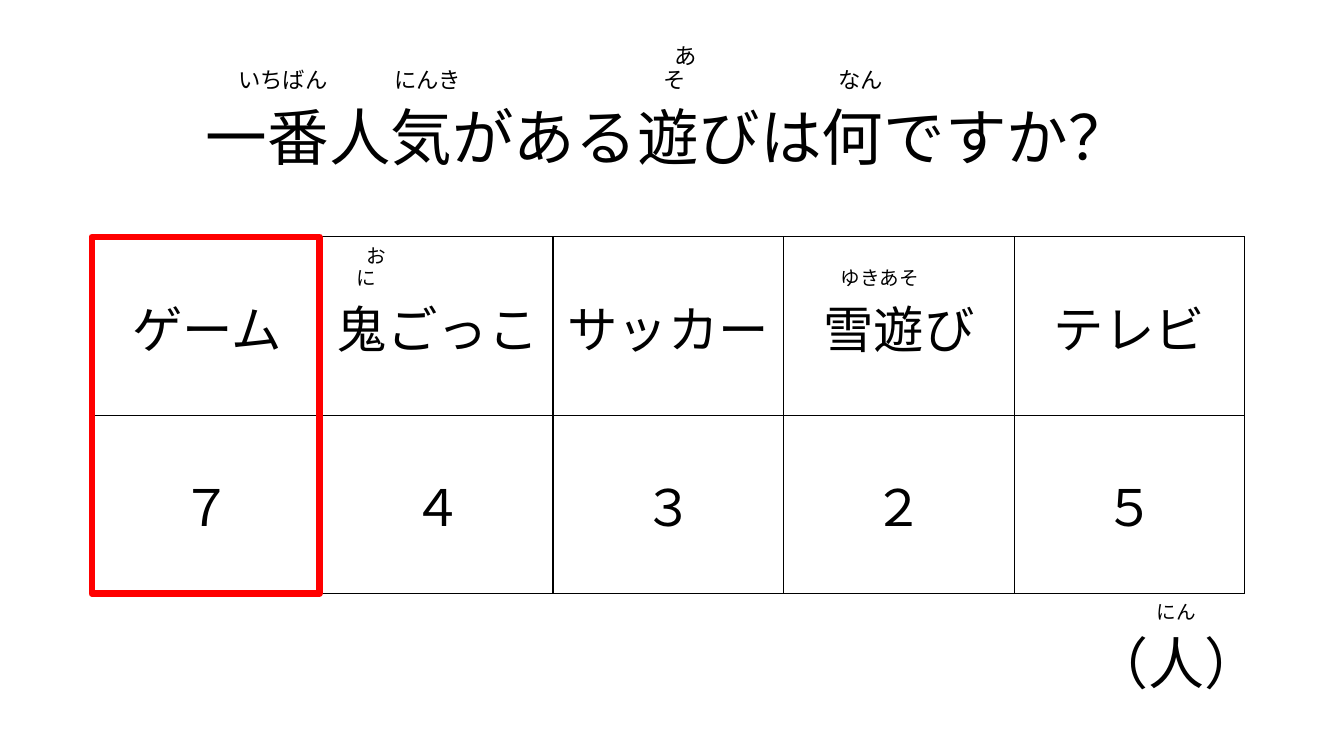
import pptx
import pptx.util
import pptx.dml.color
import pptx.enum.shapes
import pptx.enum.text
import pptx.oxml
import pptx.oxml.ns

Pt = pptx.util.Pt
Anchor = pptx.enum.text.MSO_ANCHOR


class SurveyPage:
    font = "Noto Sans CJK JP"
    colors = {"ink": "000000", "highlight": "FF0000"}

    def __init__(self, deck):
        self.page = deck.slides.add_slide(deck.slide_layouts[5])

    def color(self, name):
        return pptx.dml.color.RGBColor.from_string(self.colors[name])

    def add_text(self, frame, text, size, line_spacing=None):
        para = frame.paragraphs[0]
        para.alignment = pptx.enum.text.PP_ALIGN.CENTER
        if line_spacing:
            para.line_spacing = line_spacing
        span = para.add_run()
        span.text = text
        span.font.size = Pt(size)
        span.font.name = self.font
        span.font.color.rgb = self.color("ink")
        east_asian = pptx.oxml.parse_xml(
            f'<a:ea {pptx.oxml.ns.nsdecls("a")} typeface="{self.font}"/>')
        span._r.get_or_add_rPr().append(east_asian)

    def fill_box(self, box, text, size, anchor):
        frame = box.text_frame
        frame.word_wrap = True
        frame.auto_size = pptx.enum.text.MSO_AUTO_SIZE.NONE
        frame.vertical_anchor = anchor
        self.add_text(frame, text, size, 0.9)

    def title(self, text, left, top, width, height, size):
        box = self.page.shapes.title
        box.left, box.top, box.width, box.height = map(Pt, (left, top, width, height))
        self.fill_box(box, text, size, Anchor.MIDDLE)

    def label(self, text, left, top, width, height, size, anchor=Anchor.MIDDLE):
        box = self.page.shapes.add_textbox(*map(Pt, (left, top, width, height)))
        self.fill_box(box, text, size, anchor)

    def reading(self, text, center, bottom, width, size):
        height = 26.6
        self.label(text, center - width / 2, bottom - height, width, height,
                   size, Anchor.BOTTOM)

    def border(self, cell):
        properties = cell._tc.get_or_add_tcPr()
        for side in ("lnL", "lnR", "lnT", "lnB"):
            properties.append(pptx.oxml.parse_xml(
                f'<a:{side} {pptx.oxml.ns.nsdecls("a")} w="{int(Pt(1))}"><a:solidFill>'
                f'<a:srgbClr val="{self.colors["ink"]}"/></a:solidFill></a:{side}>'))

    def table(self, rows, left, top, width, height, size):
        table = self.page.shapes.add_table(
            len(rows), len(rows[0]), *map(Pt, (left, top, width, height))).table
        table.first_row = False
        table.horz_banding = False
        for row_index, row in enumerate(rows):
            for column_index, text in enumerate(row):
                cell = table.cell(row_index, column_index)
                cell.vertical_anchor = Anchor.MIDDLE
                self.add_text(cell.text_frame, text, size)
                self.border(cell)
                cell.fill.background()

    def highlight(self, left, top, width, height):
        frame = self.page.shapes.add_shape(
            pptx.enum.shapes.MSO_SHAPE.RECTANGLE, *map(Pt, (left, top, width, height)))
        frame.shadow.inherit = False
        frame.fill.background()
        frame.line.color.rgb = self.color("highlight")
        frame.line.width = Pt(4.5)


def main():
    deck = pptx.Presentation()
    deck.slide_width, deck.slide_height = Pt(960), Pt(540)
    survey = SurveyPage(deck)

    survey.title("一番人気がある遊びは何ですか？", 63.4, 48.2, 828, 104.4, 44)
    title_readings = [("いちばん", 202, 100), ("にんき", 305.5, 90),
                      ("　あそ", 482, 58.3), ("なん", 615, 70)]
    for text, center, width in title_readings:
        survey.reading(text, center, 70.6, width, 16)

    left, top, width, height = 65.5, 169.2, 823.7, 254.9
    votes = {"ゲーム": "７", "鬼ごっこ": "４", "サッカー": "３",
             "雪遊び": "２", "テレビ": "５"}
    survey.table([list(votes), list(votes.values())], left, top, width, height, 36)
    survey.highlight(left, top, 162.7, height)
    for text, center, reading_width in [("　おに", 261.7, 52.6), ("ゆきあそ", 628.5, 91.4)]:
        survey.reading(text, center, 210.2, reading_width, 14)

    survey.label("（人）", 766.1, 424.1, 149, 104.4, 40)
    survey.reading("にん", 840.2, 449.3, 99.4, 14)
    deck.save("out.pptx")


if __name__ == "__main__":
    main()
